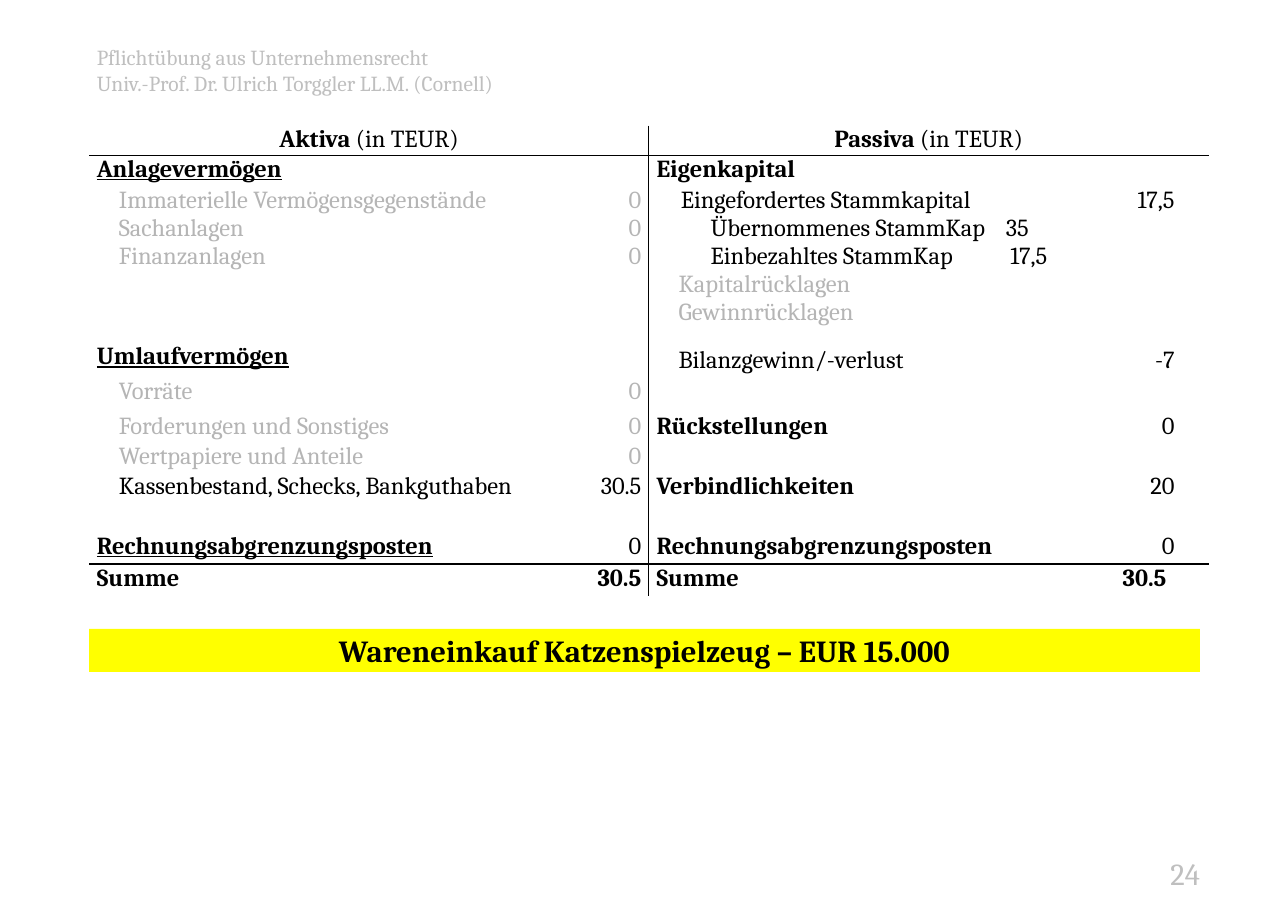
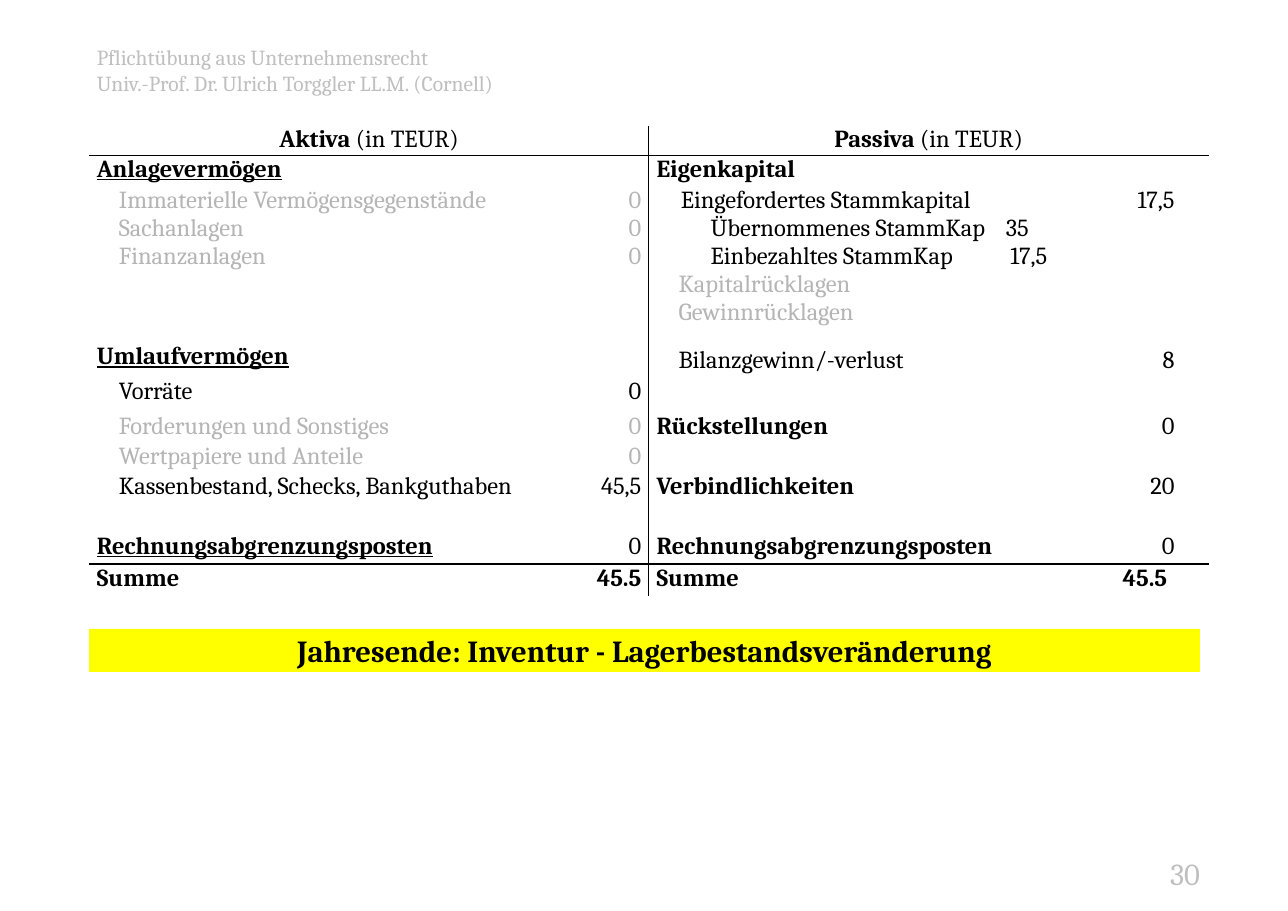
from lxml import etree
from pptx import Presentation
from pptx import util as u
from pptx.dml import color
from pptx.enum import text
from pptx.oxml import ns

FONT = "Cambria"
C = {"ink": "000000", "muted": "B5B5B5", "frame": "BFBFBF", "bar": "FFFF00", "paper": "FFFFFF"}
AL = text.PP_ALIGN
COLS = [4.23, 0.85, 4.23, 0.85]
ROWS = [0.27, 0.28, 1.42, 0.32, 0.32, 0.27, 0, 0.27, 0, 0.54, 0.29, 0.29]
ROW_SPANS = [(5, 0), (5, 1), (6, 2), (6, 3), (7, 0), (7, 1), (8, 2), (8, 3)]
NO_STYLE = "{2D5ABB26-0587-4C30-8999-92F81FD0307C}"


def style(r, size, key="ink", bold=False, line=False):
    r.font.name, r.font.size = FONT, u.Pt(size)
    r.font.bold, r.font.underline = bold, line
    r.font.color.rgb = color.RGBColor.from_string(C[key])


def paint(sp, key):
    sp.fill.solid()
    sp.fill.fore_color.rgb = color.RGBColor.from_string(C[key])


def place(sp, box):
    sp.left, sp.top, sp.width, sp.height = [u.Inches(v) for v in box]


def add_label(s, box, lines, size, align=AL.LEFT):
    sp = s.shapes.add_textbox(*[u.Inches(v) for v in box])
    tf = sp.text_frame
    tf.word_wrap = True
    tf.text = "\n".join(lines)
    for p in tf.paragraphs:
        p.alignment = align
        style(p.runs[0], size, "frame")
    return sp


def add_bar(s, box, caption):
    sp = s.shapes.title
    place(sp, box)
    paint(sp, "bar")
    tf = sp.text_frame
    tf.text = caption
    tf.word_wrap = True
    tf.auto_size = text.MSO_AUTO_SIZE.NONE
    tf.vertical_anchor = text.MSO_ANCHOR.MIDDLE
    tf.paragraphs[0].alignment = AL.CENTER
    style(tf.paragraphs[0].runs[0], 20, bold=True)


def line(label, key="ink", bold=False, under=False, indent=0, tabs=()):
    return {"runs": [(label, bold)], "key": key, "under": under, "indent": indent, "tabs": tabs}


def heading(label):
    return {**line(label), "runs": [(label + " ", True), ("(in TEUR)", False)]}


def fill_cell(cell, lines, align):
    tf = cell.text_frame
    tf.text = "\n".join(ln["runs"][0][0] for ln in lines)
    for p, ln in zip(tf.paragraphs, lines):
        p.alignment = align
        if ln["indent"]:
            p._p.get_or_add_pPr().set("indent", str(u.Inches(ln["indent"])))
        if ln["tabs"]:
            tabs = etree.SubElement(p._p.get_or_add_pPr(), ns.qn("a:tabLst"))
            for pos in ln["tabs"]:
                etree.SubElement(tabs, ns.qn("a:tab"), pos=str(u.Inches(pos)), algn="l")
        for label, _ in ln["runs"][1:]:
            p.add_run().text = label
        for r, (_, bold) in zip(p.runs, ln["runs"]):
            style(r, 16, ln["key"], bold, ln["under"])
    if not lines:
        end = etree.SubElement(tf.paragraphs[0]._p, ns.qn("a:endParaRPr"), sz="1600")
        etree.SubElement(end, ns.qn("a:latin"), typeface=FONT)


def add_borders(cell, sides):
    tc = cell._tc.get_or_add_tcPr()
    for side in "LRTB":
        ln = etree.SubElement(tc, ns.qn("a:ln" + side), w=str(u.Pt(sides.get(side, 0))))
        if side in sides:
            solid = etree.SubElement(ln, ns.qn("a:solidFill"))
            etree.SubElement(solid, ns.qn("a:srgbClr"), val=C["ink"])
        else:
            etree.SubElement(ln, ns.qn("a:noFill"))


def cell_sides(row, col):
    last = len(ROWS) - 1
    rules = [("R", 0.75, col == 1 or (row, col) == (0, 0)), ("L", 0.75, col == 2),
             ("B", 0.75, row == 0), ("T", 0.75, row == 1),
             ("B", 1, row == last - 1), ("T", 1, row == last)]
    return {side: width for side, width, on in rules if on}


def balance_rows(stock_key, cash, result, total):
    def item(label, key="muted"):
        return [line(label, key, indent=0.2)]

    def bold(label, under=False):
        return [line(label, bold=True, under=under)]

    def value(label, key="ink"):
        return [line(label, key)]

    capital = [line("Eingefordertes Stammkapital", indent=0.22),
               line("\tÜbernommenes StammKap\t35", tabs=(0.49, 3.17)),
               line("\tEinbezahltes StammKap\t17,5", tabs=(0.49, 3.21))]
    reserves = item("Kapitalrücklagen") + item("Gewinnrücklagen")
    assets = item("Immaterielle Vermögensgegenstände") + item("Sachanlagen") + item("Finanzanlagen")
    accruals = "Rechnungsabgrenzungsposten"
    none = value("0", "muted")
    return [
        ([heading("Aktiva")], [], [heading("Passiva")], []),
        (bold("Anlagevermögen", True), [], bold("Eigenkapital"), []),
        (assets, none * 3, capital + reserves, value("17,5")),
        (bold("Umlaufvermögen", True), [], item("Bilanzgewinn/-verlust", "ink"), value(result)),
        (item("Vorräte", stock_key), value("0", stock_key), [], []),
        (item("Forderungen und Sonstiges"), none, bold("Rückstellungen"), value("0")),
        ([], [], [], []),
        (item("Wertpapiere und Anteile"), none, [], []),
        ([], [], bold("Verbindlichkeiten"), value("20")),
        (item("Kassenbestand, Schecks, Bankguthaben", "ink"), value(cash), [], []),
        (bold(accruals, True), value("0"), bold(accruals), value("0")),
        (bold("Summe"), bold(total), bold("Summe"), bold(total)),
    ]


def add_balance(s, left, top, rows):
    frame = s.shapes.add_table(len(ROWS), len(COLS), u.Inches(left), u.Inches(top),
                               u.Inches(sum(COLS)), u.Inches(sum(ROWS)))
    tbl = frame.table
    tbl.first_row = tbl.horz_banding = False
    tbl._tbl.tblPr.find(ns.qn("a:tableStyleId")).text = NO_STYLE
    for col, width in zip(tbl.columns, COLS):
        col.width = u.Inches(width)
    for i, (height, row) in enumerate(zip(ROWS, rows)):
        tbl.rows[i].height = u.Inches(height)
        for j, lines in enumerate(row):
            cell = tbl.cell(i, j)
            total = i == len(ROWS) - 1
            right = j == 1 or (j == 3 and not total)
            cell.margin_left = u.Inches(0.07)
            cell.margin_right = u.Inches(0.31 if j == 3 and right else 0.07)
            cell.margin_top = cell.margin_bottom = 0
            if i == 3 and j > 1:
                cell.vertical_anchor = text.MSO_ANCHOR.MIDDLE
            fill_cell(cell, lines, AL.CENTER if i == 0 else AL.RIGHT if right else AL.LEFT)
            add_borders(cell, cell_sides(i, j))
            paint(cell, "paper")
    for j in (0, 2):
        tbl.cell(0, j).merge(tbl.cell(0, j + 1))
    for i, j in ROW_SPANS:
        tbl.cell(i, j).merge(tbl.cell(i + 1, j))


def add_letterhead(s):
    sp = add_label(s, (0.78, 0.35, 8.35, 0.71),
                   ["Pflichtübung aus Unternehmensrecht",
                    "Univ.-Prof. Dr. Ulrich Torggler LL.M. (Cornell)"], 14)
    s.slide_layout.shapes.element.append(sp.element)


def add_balance_slide(prs, number, caption, **values):
    s = prs.slides.add_slide(prs.slide_layouts[5])
    add_bar(s, (0.81, 5.71, 10.08, 0.39), caption)
    add_balance(s, 0.81, 1.14, balance_rows(**values))
    add_label(s, (8.63, 7.71, 2.36, 0.44), [number], 20, AL.RIGHT)
    return s


def main():
    prs = Presentation()
    prs.slide_width, prs.slide_height = u.Inches(11.69), u.Inches(8.27)
    s = add_balance_slide(prs, "24", "Wareneinkauf Katzenspielzeug – EUR 15.000",
                          stock_key="muted", cash="30.5", result="-7", total="30.5")
    add_letterhead(s)
    add_balance_slide(prs, "30", "Jahresende: Inventur - Lagerbestandsveränderung",
                      stock_key="ink", cash="45,5", result="8", total="45.5")
    prs.save("out.pptx")


if __name__ == "__main__":
    main()
